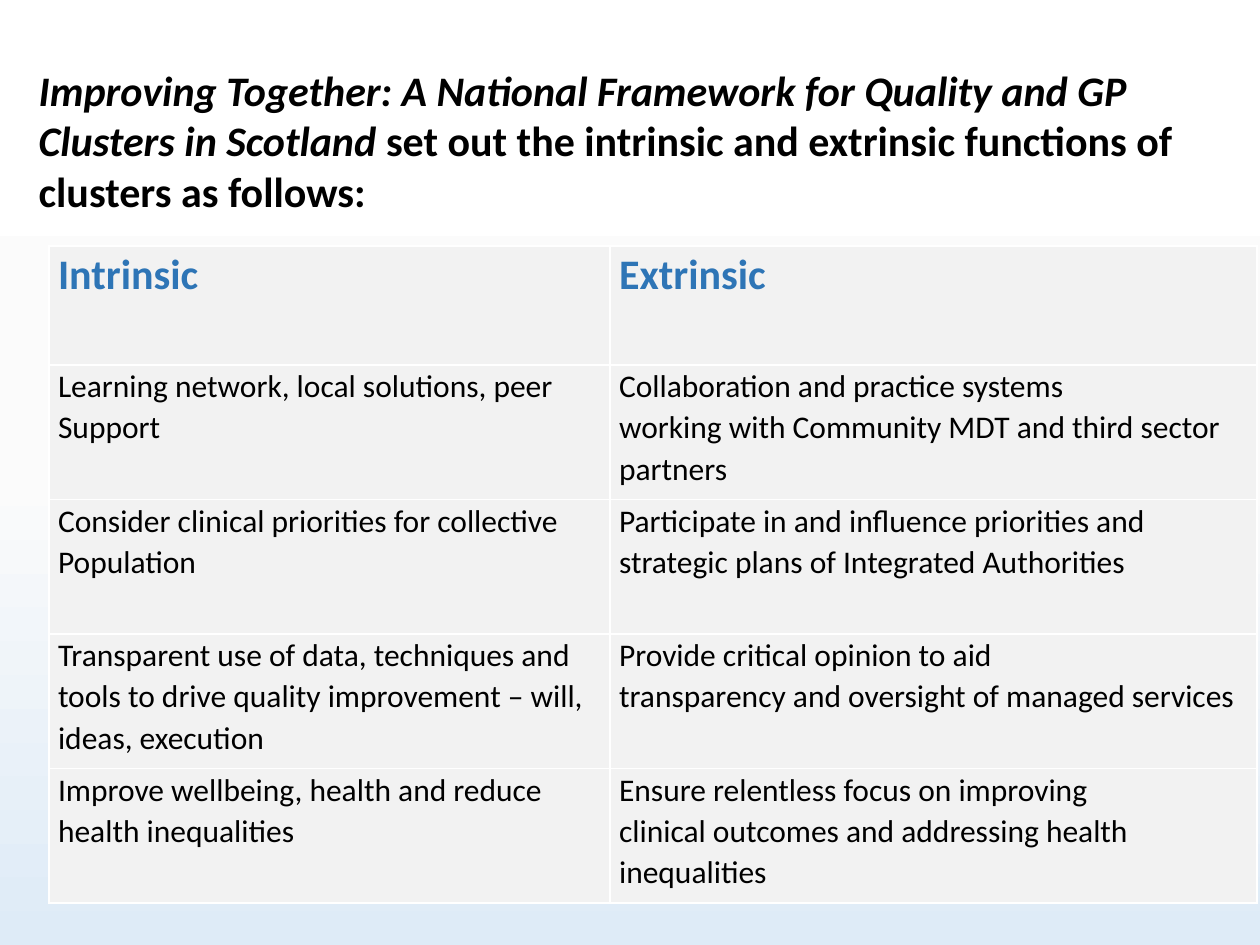
import copy

import pptx
import pptx.dml.color
import pptx.enum.text
import pptx.oxml
import pptx.oxml.ns
import pptx.util
from pptx.util import Cm

COLOURS = {
    "text": "000000",
    "heading": "2E75B6",
    "cell": "F2F2F2",
    "border": "FFFFFF",
    "sky_top": "FFFFFF",
    "sky_middle": "FBFBFB",
    "sky_bottom": "DEEBF7",
}
TITLE_FORMAT = {"name": "Calibri", "size": pptx.util.Pt(24), "bold": True}
BODY_FORMAT = {"name": "Calibri", "size": pptx.util.Pt(18), "bold": False}
TITLE_RUNS = [
    ("Improving Together: A National Framework for Quality and GP Clusters in Scotland", True),
    (" set out the intrinsic and extrinsic functions of clusters as follows:", False),
]
FUNCTIONS = [
    ("Intrinsic", "Extrinsic"),
    ("Learning network, local solutions, peer\nSupport",
     "Collaboration and practice systems\nworking with Community MDT and third sector partners"),
    ("Consider clinical priorities for collective\nPopulation",
     "Participate in and influence priorities and strategic plans of Integrated Authorities"),
    ("Transparent use of data, techniques and tools to drive quality improvement – will, ideas, execution",
     "Provide critical opinion to aid\ntransparency and oversight of managed services"),
    ("Improve wellbeing, health and reduce\nhealth inequalities",
     "Ensure relentless focus on improving\nclinical outcomes and addressing health inequalities"),
]


def rgb(name):
    """Return the named colour."""
    return pptx.dml.color.RGBColor.from_string(COLOURS[name])


def apply_format(target, values):
    """Set each attribute of the target from the dict."""
    for name, value in values.items():
        setattr(target, name, value)


def add_run(paragraph, text, values, colour):
    """Add one formatted run to the paragraph."""
    run = paragraph.add_run()
    run.text = text
    apply_format(run.font, values)
    run.font.color.rgb = rgb(colour)


def paint_background(slide):
    """Fill the background with a three-stop vertical gradient."""
    fill = slide.background.fill
    fill.gradient()
    fill.gradient_angle = 270
    stop_list = next(slide.element.iter(pptx.oxml.ns.qn("a:gsLst")))
    stop_list.insert(1, copy.deepcopy(stop_list[0]))
    for stop, position, colour in zip(
        fill.gradient_stops, (0, 0.5, 1), ("sky_top", "sky_middle", "sky_bottom")
    ):
        stop.position = position
        stop.color.rgb = rgb(colour)


def add_title(slide, left, top, width, height):
    """Place the introductory sentence in the given box."""
    frame = slide.shapes.add_textbox(left, top, width, height).text_frame
    apply_format(frame, {
        "word_wrap": True,
        "auto_size": pptx.enum.text.MSO_AUTO_SIZE.SHAPE_TO_FIT_TEXT,
    })
    for text, italic in TITLE_RUNS:
        add_run(frame.paragraphs[0], text, {**TITLE_FORMAT, "italic": italic}, "text")


def add_borders(cell):
    """Draw a thin line on all four sides of the cell."""
    properties = cell._tc.get_or_add_tcPr()
    for index, side in enumerate(("lnL", "lnR", "lnT", "lnB")):
        properties.insert(index, pptx.oxml.parse_xml(
            f'<a:{side} {pptx.oxml.ns.nsdecls("a")} w="12700"><a:solidFill>'
            f'<a:srgbClr val="{COLOURS["border"]}"/></a:solidFill></a:{side}>'
        ))


def fill_cell(cell, text, values, colour):
    """Write the lines of text and style the cell."""
    apply_format(cell, {
        "margin_left": Cm(0.18), "margin_right": Cm(0.18),
        "margin_top": 0, "margin_bottom": 0,
    })
    cell.fill.solid()
    cell.fill.fore_color.rgb = rgb("cell")
    add_borders(cell)
    for index, line in enumerate(text.split("\n")):
        frame = cell.text_frame
        paragraph = frame.add_paragraph() if index else frame.paragraphs[0]
        paragraph.line_spacing = 1.07
        add_run(paragraph, line, values, colour)


def add_functions_table(slide, left, top, width, height):
    """Place the table of cluster functions in the given box."""
    table = slide.shapes.add_table(len(FUNCTIONS), 2, left, top, width, height).table
    first_width = Cm(11.31)
    header_height = Cm(2.4)
    table.columns[0].width = first_width
    table.columns[1].width = width - first_width
    body_height = (height - header_height) // (len(FUNCTIONS) - 1)
    for row_index, texts in enumerate(FUNCTIONS):
        table.rows[row_index].height = body_height if row_index else header_height
        style = (BODY_FORMAT, "text") if row_index else (TITLE_FORMAT, "heading")
        for column_index, text in enumerate(texts):
            fill_cell(table.cell(row_index, column_index), text, *style)


def main():
    """Build and save the presentation."""
    presentation = pptx.Presentation()
    apply_format(presentation, {"slide_width": Cm(25.4), "slide_height": Cm(19.05)})
    slide = presentation.slides.add_slide(presentation.slide_layouts[6])
    paint_background(slide)
    add_title(slide, Cm(0.53), Cm(1.17), Cm(24.43), Cm(3.33))
    add_functions_table(slide, Cm(0.99), Cm(4.96), Cm(24.35), Cm(13.25))
    presentation.save("out.pptx")


if __name__ == "__main__":
    main()
